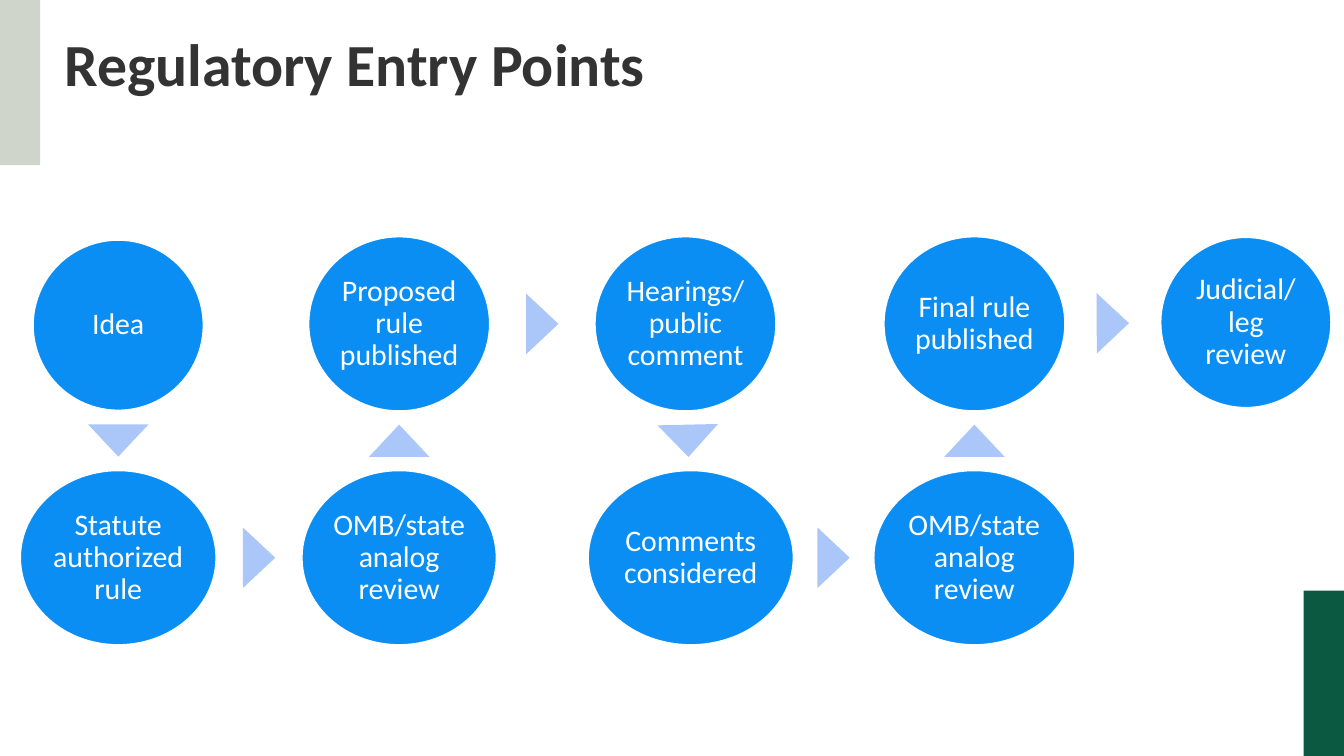
from dataclasses import dataclass
from itertools import pairwise
from math import atan2, degrees

from pptx import Presentation
from pptx.dml.color import RGBColor
from pptx.enum.shapes import MSO_SHAPE as Shape
from pptx.enum.text import MSO_ANCHOR as Anchor, PP_ALIGN as Align
from pptx.util import Inches, Pt


@dataclass(frozen=True)
class Theme:
    font: str = "Calibri"
    title_size: int = 32
    step_size: int = 16
    title: str = "333333"
    light: str = "FFFFFF"
    step: str = "0A8EF3"
    arrow: str = "ABC6F8"
    sage: str = "D0D5CB"
    green: str = "0B5940"


@dataclass(frozen=True)
class Step:
    text: str
    x: float
    y: float
    width: float
    height: float = 1.3


THEME = Theme()
SLIDE_W = 10
SLIDE_H = SLIDE_W * 9 / 16
TOP_ROW, BOTTOM_ROW = 0.64, 2.38
FLOW_BOX = (0.15, 1.77)
# Step centres are measured from the top left corner of the flow.
STEPS = [
    Step("Idea", 0.73, TOP_ROW + 0.01, 1.27, 1.27),
    Step("Statute authorized rule", 0.73, BOTTOM_ROW, 1.46),
    Step("OMB/state analog review", 2.82, BOTTOM_ROW, 1.45),
    Step("Proposed rule published", 2.82, TOP_ROW, 1.35),
    Step("Hearings/ public comment", 4.95, TOP_ROW, 1.35),
    Step("Comments considered", 4.99, BOTTOM_ROW, 1.53),
    Step("OMB/state analog review", 7.1, BOTTOM_ROW, 1.5),
    Step("Final rule published", 7.1, TOP_ROW, 1.35),
    Step("Judicial/ leg review", 9.12, TOP_ROW - 0.01, 1.27, 1.27),
]


def add_filled(slide, kind, box, fill):
    shape = slide.shapes.add_shape(kind, *map(Inches, box))
    shape.shadow.inherit = False
    shape.fill.solid()
    shape.fill.fore_color.rgb = RGBColor.from_string(fill)
    shape.line.fill.background()
    return shape


def write(shape, text, *, size, color, bold=False, align=Align.LEFT,
          anchor=Anchor.MIDDLE, insets=(0.1, 0.05, 0.1, 0.05)):
    frame = shape.text_frame
    frame.word_wrap = True
    frame.vertical_anchor = anchor
    (frame.margin_left, frame.margin_top,
     frame.margin_right, frame.margin_bottom) = map(Inches, insets)
    paragraph = frame.paragraphs[0]
    paragraph.alignment = align
    paragraph.line_spacing = 0.9
    run = paragraph.add_run()
    run.text = text
    run.font.name = THEME.font
    run.font.size = Pt(size)
    run.font.bold = bold
    run.font.color.rgb = RGBColor.from_string(color)


def add_corner_bars(slide, width, height):
    bar_w, bar_h = 0.3, 1.23
    add_filled(slide, Shape.RECTANGLE,
               (width - bar_w, height - bar_h, bar_w, bar_h), THEME.green)
    add_filled(slide, Shape.RECTANGLE, (0, 0, bar_w, bar_h), THEME.sage)


def add_title(slide, box, text):
    title = slide.shapes.add_textbox(*map(Inches, box))
    write(title, text, size=THEME.title_size, color=THEME.title, bold=True,
          anchor=Anchor.TOP, insets=(0.1, 0.19, 0.1, 0.05))


def add_step(slide, left, top, step):
    box = (left + step.x - step.width / 2, top + step.y - step.height / 2,
           step.width, step.height)
    circle = add_filled(slide, Shape.OVAL, box, THEME.step)
    circle.line.color.rgb = RGBColor.from_string(THEME.light)
    circle.line.width = Pt(1)
    write(circle, step.text, size=THEME.step_size, color=THEME.light,
          align=Align.CENTER, insets=(0.02,) * 4)


def gap_middle(start, start_size, end, end_size):
    """Middle of the gap between two steps along one axis."""
    sign = 1 if end > start else -1
    return (start + end + sign * (start_size - end_size) / 2) / 2


def add_arrow(slide, left, top, start, end):
    """Triangle halfway between two steps, pointing at the second."""
    width, height = 0.45, 0.24
    dx, dy = end.x - start.x, end.y - start.y
    x, y = (start.x + end.x) / 2, (start.y + end.y) / 2
    if abs(dx) > abs(dy):
        x = gap_middle(start.x, start.width, end.x, end.width)
    else:
        y = gap_middle(start.y, start.height, end.y, end.height)
    arrow = add_filled(slide, Shape.ISOSCELES_TRIANGLE,
                       (left + x - width / 2, top + y - height / 2, width, height),
                       THEME.arrow)
    arrow.rotation = degrees(atan2(dy, dx)) + 90


def add_flow(slide, left, top, steps):
    add_step(slide, left, top, steps[0])
    for start, end in pairwise(steps):
        add_arrow(slide, left, top, start, end)
        add_step(slide, left, top, end)


def main():
    deck = Presentation()
    deck.slide_width, deck.slide_height = Inches(SLIDE_W), Inches(SLIDE_H)
    slide = deck.slides.add_slide(deck.slide_layouts[6])
    add_corner_bars(slide, SLIDE_W, SLIDE_H)
    add_title(slide, (0.38, 0.07, 9.31, 1.28), "Regulatory Entry Points")
    add_flow(slide, *FLOW_BOX, STEPS)
    deck.save("out.pptx")


if __name__ == "__main__":
    main()
